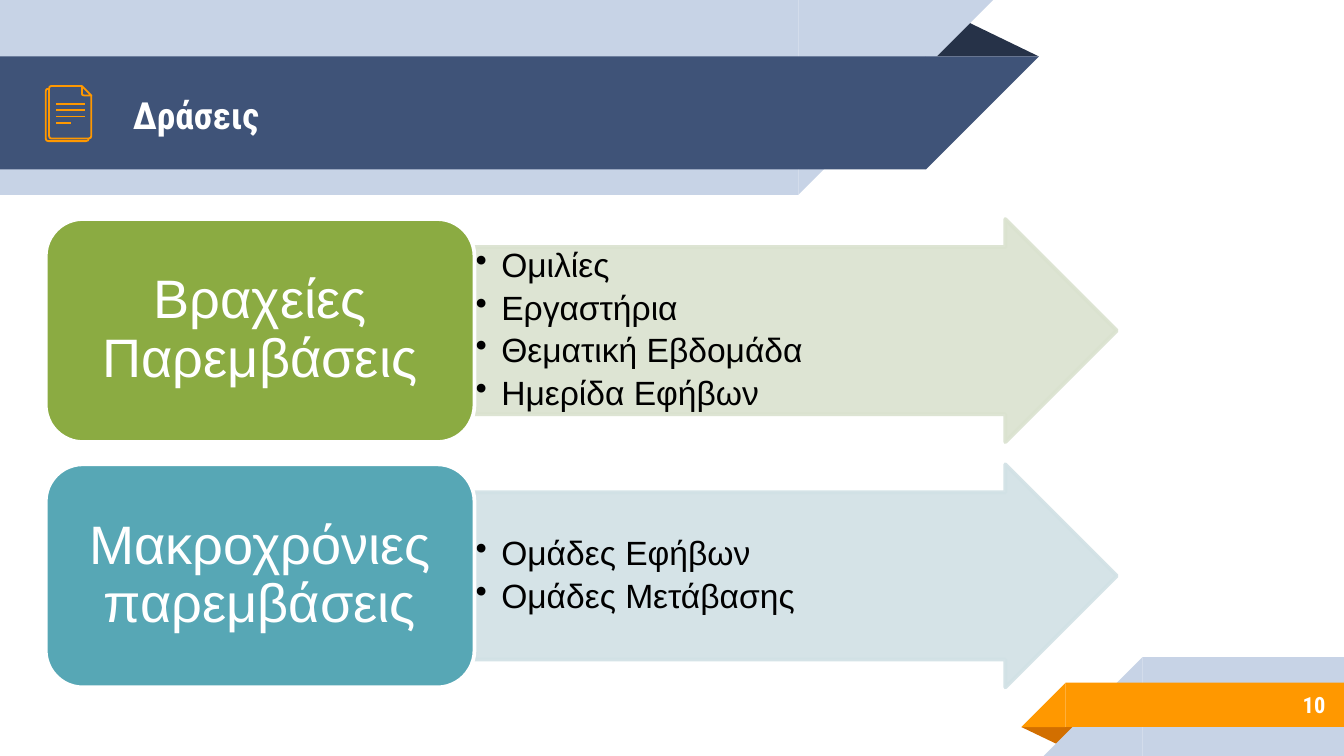
from lxml.etree import SubElement
from pptx import Presentation
from pptx.dml.color import RGBColor
from pptx.enum.shapes import MSO_CONNECTOR, MSO_SHAPE
from pptx.enum.text import MSO_ANCHOR, PP_ALIGN
from pptx.oxml.ns import qn
from pptx.util import Inches, Pt

WHITE, BLACK, NAVY, PALE, ORANGE = "FFFFFF", "000000", "3F5378", "C7D3E6", "FF9800"
ACTIONS = [
    ("Βραχείες Παρεμβάσεις", "8BAB42", "DAE2CF",
     ["Ομιλίες", "Εργαστήρια", "Θεματική Εβδομάδα", "Ημερίδα Εφήβων"]),
    ("Μακροχρόνιες παρεμβάσεις", "57A7B5", "D1E1E5",
     ["Ομάδες Εφήβων", "Ομάδες Μετάβασης"]),
]


def color(value):
    return RGBColor.from_string(value)


class SlideBuilder:
    """Draws styled elements on a slide using a grid 100 columns wide with square cells."""

    heading_font = "Roboto Condensed"
    body_font = "Arial"

    def __init__(self, presentation):
        self.cell = presentation.slide_width / 100
        self.slide = presentation.slides.add_slide(presentation.slide_layouts[6])

    def grid(self, *lengths):
        return [round(length * self.cell) for length in lengths]

    def shape(self, kind, box, fill, rotation=0, adjustments=(), outline=None, opacity=100):
        shape = self.slide.shapes.add_shape(kind, *self.grid(*box))
        shape.shadow.inherit = False
        shape.rotation = rotation
        for index, value in enumerate(adjustments):
            shape.adjustments[index] = value
        shape.fill.solid()
        shape.fill.fore_color.rgb = color(fill)
        if outline:
            shape.line.color.rgb = color(outline)
            shape.line.width = Pt(2)
        else:
            shape.line.fill.background()
        if opacity < 100:
            for tone in shape._element.spPr.iter(qn("a:srgbClr")):
                SubElement(tone, qn("a:alpha"), val=str(opacity * 1000))
        return shape

    def band(self, left, top, width, height, fill, slant_on_right):
        self.shape(MSO_SHAPE.RECTANGLE, (left, top, width, height), fill)
        slant_left = left + width if slant_on_right else left - height
        self.shape(MSO_SHAPE.RIGHT_TRIANGLE, (slant_left, top, height, height), fill,
                   rotation=90 if slant_on_right else 270)

    def text(self, shape, lines, size, font, ink, align, margins, bold=False):
        frame = shape.text_frame
        frame.word_wrap = True
        frame.vertical_anchor = MSO_ANCHOR.MIDDLE
        frame.margin_left = frame.margin_right = Inches(margins[0])
        frame.margin_top = frame.margin_bottom = Inches(margins[1])
        frame.text = "\n".join(lines)
        for paragraph in frame.paragraphs:
            paragraph.alignment = align
            paragraph.font.size = Pt(size)
            paragraph.font.name = font
            paragraph.font.bold = bold
            paragraph.font.color.rgb = color(ink)
        return frame.paragraphs

    def heading(self, text, box, size, align):
        shape = self.slide.shapes.add_textbox(*self.grid(*box))
        self.text(shape, [text], size, self.heading_font, WHITE, align, (0.1, 0.1), bold=True)

    def action(self, top, title, fill, tint, items):
        arrow = self.shape(MSO_SHAPE.RIGHT_ARROW, (35.3, top, 47.8, 16.6), tint,
                           adjustments=(0.75, 0.5), outline=tint, opacity=90)
        for paragraph in self.text(arrow, items, 18, self.body_font, BLACK,
                                   PP_ALIGN.LEFT, (0.01, 0.01)):
            paragraph.line_spacing = 0.9
            paragraph.space_after = Pt(3.5)
            properties = paragraph._p.get_or_add_pPr()
            properties.set("marL", str(Inches(0.19)))
            properties.set("indent", str(-Inches(0.19)))
            bullet = SubElement(properties, qn("a:buChar"), char="•")
            properties.find(qn("a:defRPr")).addprevious(bullet)
        label = self.shape(MSO_SHAPE.ROUNDED_RECTANGLE, (3.4, top, 31.9, 16.6), fill,
                           outline=WHITE)
        for paragraph in self.text(label, [title], 29, self.body_font, WHITE,
                                   PP_ALIGN.CENTER, (0.12, 0.06)):
            paragraph.line_spacing = 0.9

    def outline(self, points, close=False):
        start, *others = [self.grid(*point) for point in points]
        builder = self.slide.shapes.build_freeform(*start)
        builder.add_line_segments(others, close=close)
        shape = builder.convert_to_shape()
        shape.shadow.inherit = False
        shape.fill.background()
        self.stroke(shape)

    def rule(self, left, right, row):
        connector = self.slide.shapes.add_connector(
            MSO_CONNECTOR.STRAIGHT, *self.grid(left, row, right, row))
        self.stroke(connector)
        SubElement(connector._element.spPr, qn("a:effectLst"))

    def stroke(self, shape):
        shape.line.color.rgb = color(ORANGE)
        shape.line.width = Pt(0.96)

    def document_icon(self):
        self.outline([(6.6, 10.3), (6.55, 10.45), (6.4, 10.5), (3.6, 10.5), (3.45, 10.45),
                      (3.4, 10.3), (3.4, 6.8), (3.45, 6.65), (3.6, 6.6)])
        self.outline([(6.8, 7.1), (6.8, 10.1), (6.75, 10.25), (6.6, 10.3), (3.8, 10.3),
                      (3.7, 10.25), (3.65, 10.1), (3.65, 6.6), (3.7, 6.45), (3.8, 6.4),
                      (6.1, 6.4)])
        for index, right in enumerate((6.3, 6.3, 6.3, 5.3)):
            self.rule(4.2, right, 7.75 + index * 0.46)
        self.outline([(6.1, 7), (6.1, 6.4), (6.8, 7.1), (6.25, 7.1), (6.15, 7.08)], close=True)


def main():
    presentation = Presentation()
    presentation.slide_width = Inches(10)
    presentation.slide_height = Inches(10) * 9 // 16
    builder = SlideBuilder(presentation)

    builder.shape(MSO_SHAPE.ISOSCELES_TRIANGLE, (68.8, 1.4, 8.5, 2.8), "263248",
                  adjustments=(0.32,))
    builder.band(0, 0, 59.4, 14.5, PALE, slant_on_right=True)
    builder.band(0, 4.2, 68.9, 8.4, NAVY, slant_on_right=True)
    builder.shape(MSO_SHAPE.ISOSCELES_TRIANGLE, (76, 54.1, 4.3, 1.4), "D26F00",
                  rotation=180, adjustments=(0.32,))
    builder.band(85, 48.9, 15, 7.35, PALE, slant_on_right=False)
    builder.band(79.3, 50.8, 20.7, 3.3, ORANGE, slant_on_right=False)

    builder.heading("Δράσεις", (8.9, 4.3, 57.5, 8.4), 20, PP_ALIGN.LEFT)
    builder.heading("10", (83.3, 50.7, 16.3, 3.5), 12, PP_ALIGN.RIGHT)
    builder.document_icon()
    for index, action in enumerate(ACTIONS):
        builder.action(16.3 + index * 18.25, *action)

    presentation.save("out.pptx")


if __name__ == "__main__":
    main()
